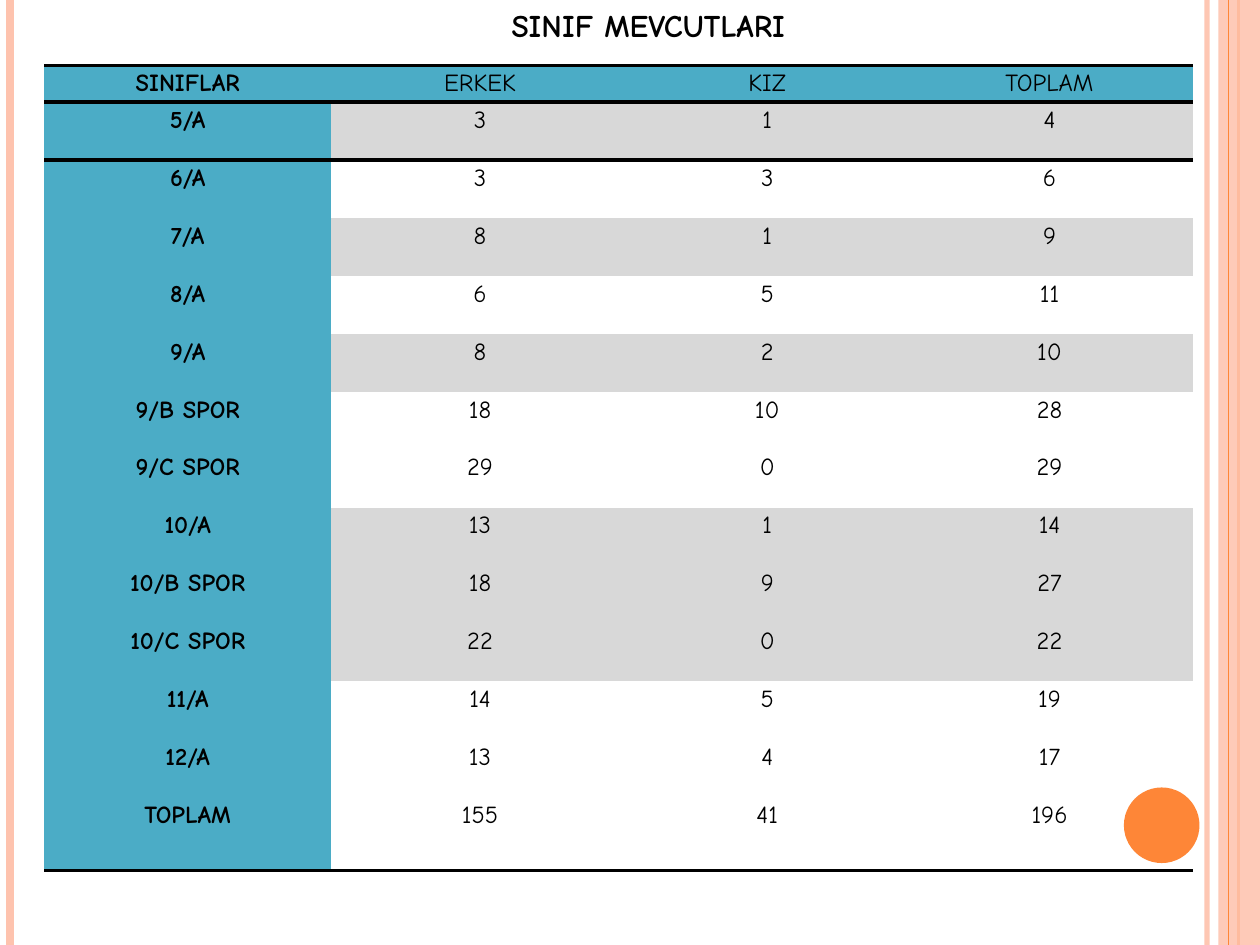
from lxml import etree
from pptx import Presentation
from pptx.dml.color import RGBColor
from pptx.enum.shapes import MSO_CONNECTOR, MSO_SHAPE
from pptx.enum.text import MSO_AUTO_SIZE, PP_ALIGN
from pptx.oxml.ns import qn
from pptx.util import Inches, Pt

STRAIGHT = MSO_CONNECTOR.STRAIGHT
RECTANGLE, OVAL = MSO_SHAPE.RECTANGLE, MSO_SHAPE.OVAL
CENTER = PP_ALIGN.CENTER
FIT_SHAPE = MSO_AUTO_SIZE.SHAPE_TO_FIT_TEXT

FONT = "Comic Neue"
BLACK, TEAL, GREY = "000000", "4BACC6", "D8D8D8"
PEACH, ORANGE = "FEC3AE", "FE8637"
PLAIN_STYLE = "{2D5ABB26-0587-4C30-8999-92F81FD0307C}"

HEADINGS = ["SINIFLAR", "ERKEK", "KIZ", "TOPLAM"]
# class, boys, girls, shaded row
CLASSES = [
    ("5/A", 3, 1, True),
    ("6/A", 3, 3, False),
    ("7/A", 8, 1, True),
    ("8/A", 6, 5, False),
    ("9/A", 8, 2, True),
    ("9/B SPOR", 18, 10, False),
    ("9/C SPOR", 29, 0, False),
    ("10/A", 13, 1, True),
    ("10/B SPOR", 18, 9, True),
    ("10/C SPOR", 22, 0, True),
    ("11/A", 14, 5, False),
    ("12/A", 13, 4, False),
]
COLUMN_WIDTHS = [2.28, 2.36, 2.2, 2.28]
HEADER_HEIGHT, CLASS_HEIGHT, TOTAL_HEIGHT = 0.29, 0.46, 0.58


def rgb(color):
    return RGBColor.from_string(color)


def set_alpha(fill_parent, percent):
    color = fill_parent.find(".//" + qn("a:srgbClr"))
    etree.SubElement(color, qn("a:alpha"), val=str(percent * 1000))


def format_text(paragraph, size, bold):
    paragraph.alignment = CENTER
    for run in paragraph.runs:
        run.font.name = FONT
        run.font.size = Pt(size)
        run.font.bold = bold
        run.font.color.rgb = rgb(BLACK)


def add_stripe(slide, x, top, height, color, width, alpha=None):
    stripe = slide.shapes.add_connector(
        STRAIGHT, Inches(x), Inches(top), Inches(x), Inches(top + height))
    stripe.line.color.rgb = rgb(color)
    stripe.line.width = Pt(width)
    properties = stripe.line._ln.getparent()
    etree.SubElement(properties, qn("a:effectLst"))
    if alpha:
        set_alpha(stripe.line._ln, alpha)


def add_solid(slide, kind, left, top, width, height, color):
    solid = slide.shapes.add_shape(
        kind, Inches(left), Inches(top), Inches(width), Inches(height))
    solid.shadow.inherit = False
    solid.fill.solid()
    solid.fill.fore_color.rgb = rgb(color)
    solid.line.fill.background()
    return solid


def add_frame(slide, left, top, width, height):
    """Side stripes, right band and the corner disc."""
    right = left + width
    add_stripe(slide, right - 0.42, top, height, PEACH, 3, 93)
    add_stripe(slide, left + 0.08, top, height, PEACH, 4.5)
    add_stripe(slide, right - 0.17, top, height, ORANGE, 1.5)
    band = add_solid(slide, RECTANGLE, right - 0.33, top, 0.33, height, PEACH)
    set_alpha(band._element.spPr, 87)
    add_stripe(slide, right - 0.25, top, height, ORANGE, 0.75)
    add_solid(slide, OVAL, right - 1.08, top + height - 1.25, 0.6, 0.6, ORANGE)


def add_rule(cell, side):
    """Black border; call for the bottom before the top to keep XML order."""
    border = etree.Element(qn("a:" + side), w=str(Pt(2.25)))
    fill = etree.SubElement(border, qn("a:solidFill"))
    etree.SubElement(fill, qn("a:srgbClr"), val=BLACK)
    cell._tc.get_or_add_tcPr().insert(0, border)


def fill_cell(cell, text, bold, color):
    cell.margin_left = cell.margin_right = Inches(0.07)
    cell.margin_top = cell.margin_bottom = 0
    paragraph = cell.text_frame.paragraphs[0]
    paragraph.text = text
    paragraph.line_spacing = 1.15
    format_text(paragraph, 14, bold)
    if color:
        cell.fill.solid()
        cell.fill.fore_color.rgb = rgb(color)
    else:
        cell.fill.background()


def add_class_table(slide, left, top, width, height):
    boys = sum(row[1] for row in CLASSES)
    girls = sum(row[2] for row in CLASSES)
    counts = CLASSES + [("TOPLAM", boys, girls, False)]
    rows = [(HEADINGS, TEAL)]
    for name, boys, girls, shaded in counts:
        texts = [name, str(boys), str(girls), str(boys + girls)]
        rows.append((texts, GREY if shaded else None))

    table = slide.shapes.add_table(
        len(rows), len(HEADINGS), Inches(left), Inches(top),
        Inches(width), Inches(height)).table
    table.first_row = table.horz_banding = False
    table._tbl.tblPr.find(qn("a:tableStyleId")).text = PLAIN_STYLE
    for column, column_width in zip(table.columns, COLUMN_WIDTHS):
        column.width = Inches(column_width)
    heights = [HEADER_HEIGHT] + [CLASS_HEIGHT] * len(CLASSES) + [TOTAL_HEIGHT]
    for row, row_height in zip(table.rows, heights):
        row.height = Inches(row_height)

    last = len(rows) - 1
    for r, (texts, color) in enumerate(rows):
        for c, text in enumerate(texts):
            cell = table.cell(r, c)
            fill_cell(cell, text, c == 0, TEAL if c == 0 else color)
            if r in (0, last):
                add_rule(cell, "lnB")
            if r in (0, 1):
                add_rule(cell, "lnT")


def add_title(slide, left, top, width, height):
    title = slide.shapes.add_textbox(
        Inches(left), Inches(top), Inches(width), Inches(height)).text_frame
    title.word_wrap = False
    title.auto_size = FIT_SHAPE
    title.text = "SINIF MEVCUTLARI"
    format_text(title.paragraphs[0], 18, True)


def main():
    deck = Presentation()
    deck.slide_width, deck.slide_height = Inches(10), Inches(7.5)
    slide = deck.slides.add_slide(deck.slide_layouts[6])
    add_frame(slide, 0, 0, 10, 7.5)
    add_class_table(slide, 0.35, 0.52, 9.13, 6.38)
    add_title(slide, 3.74, 0, 2.81, 0.4)
    deck.save("out.pptx")


if __name__ == "__main__":
    main()
